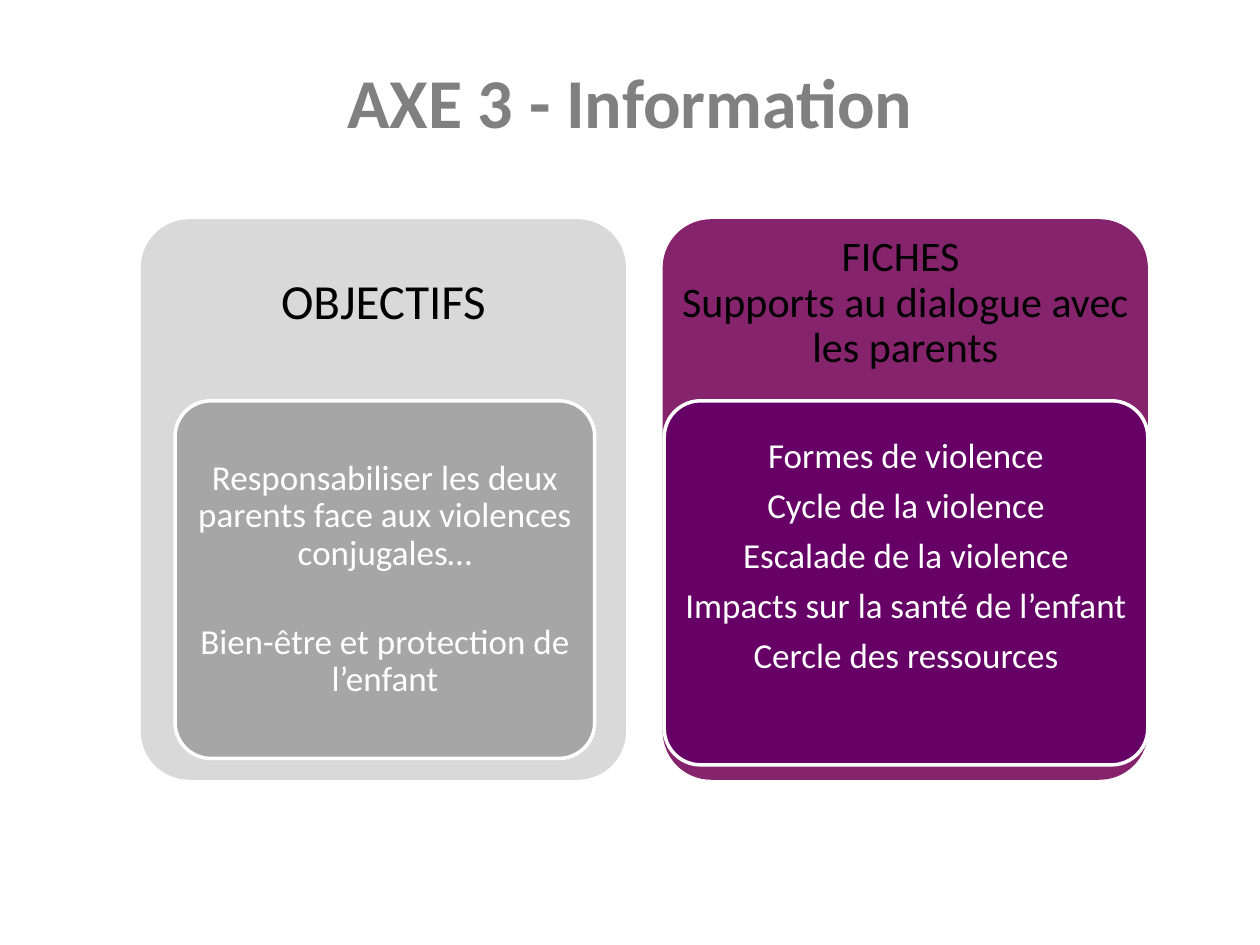
import pptx
import pptx.util
import pptx.dml.color
import pptx.enum.shapes
import pptx.enum.text
from pptx.util import Cm

COLORS = {
    "title": "808080",
    "heading": "000000",
    "detail": "FFFFFF",
    "goals_panel": "D9D9D9",
    "goals_card": "A6A6A6",
    "sheets_panel": "85236D",
    "sheets_card": "660066",
}


class SlideBuilder:
    """Hold the style and the current slide, and add its elements."""

    font = "Calibri"
    top, width, height = 4.42, 9.78, 11.3
    heading_height = 3.4
    card_top = 8.08
    card_margin = 0.21

    def __init__(self, slide):
        self.slide = slide

    def color(self, name):
        return pptx.dml.color.RGBColor.from_string(COLORS[name])

    def rounded(self, box, fill, outlined=False):
        shape = self.slide.shapes.add_shape(
            pptx.enum.shapes.MSO_SHAPE.ROUNDED_RECTANGLE, *map(Cm, box))
        shape.adjustments[0] = 0.1
        shape.shadow.inherit = False
        shape.fill.solid()
        shape.fill.fore_color.rgb = self.color(fill)
        if outlined:
            shape.line.color.rgb = self.color("detail")
            shape.line.width = pptx.util.Pt(2)
        else:
            shape.line.fill.background()

    def text(self, box, lines, size, color, insets, gaps=None, spacing=0.9, bold=False):
        frame = self.slide.shapes.add_textbox(*map(Cm, box)).text_frame
        frame.word_wrap = True
        frame.vertical_anchor = pptx.enum.text.MSO_ANCHOR.MIDDLE
        frame.margin_left, frame.margin_top, frame.margin_right, frame.margin_bottom = map(Cm, insets)
        frame.text = "\n".join(lines)
        for paragraph, gap in zip(frame.paragraphs, gaps or [0] * len(lines)):
            paragraph.alignment = pptx.enum.text.PP_ALIGN.CENTER
            paragraph.line_spacing = spacing
            paragraph.space_after = pptx.util.Pt(gap)
            paragraph.font.name = self.font
            paragraph.font.size = pptx.util.Pt(size)
            paragraph.font.bold = bold
            paragraph.font.color.rgb = self.color(color)

    def title(self, wording):
        self.text((0, 0.74, 25.4, 2.57), [wording], 40, "title",
                  (0.25, 0.13, 0.25, 0.13), spacing=1, bold=True)

    def panel(self, left, theme, heading, size, inset):
        self.rounded((left, self.top, self.width, self.height), f"{theme}_panel")
        gaps = [0] * (len(heading) - 1) + [size * 0.35]
        self.text((left, self.top, self.width, self.heading_height),
                  heading, size, "heading", [inset] * 4, gaps)

    def card(self, left, width, height, theme, details, gaps, bottom=0.1):
        self.rounded((left, self.card_top, width, height), f"{theme}_card", outlined=True)
        margin = self.card_margin
        box = (left + margin, self.card_top + margin, width - 2 * margin, height - 2 * margin)
        self.text(box, details, 20, "detail", (0.15, 0.1, 0.15, bottom), gaps)


def main():
    deck = pptx.Presentation()
    deck.slide_width, deck.slide_height = Cm(25.4), Cm(19.05)
    builder = SlideBuilder(deck.slides.add_slide(deck.slide_layouts[6]))

    builder.panel(2.84, "goals", ["OBJECTIFS"], 28, 0.3)
    goals = ["Responsabiliser les deux parents face aux violences conjugales…",
             "Bien-être et protection de l’enfant"]
    builder.card(3.53, 8.46, 7.21, "goals", goals, [29, 7])

    builder.panel(13.36, "sheets", ["FICHES ", "Supports au dialogue avec les parents"], 24, 0.25)
    sheets = ["Formes de violence", "Cycle de la violence", "Escalade de la violence",
              "Impacts sur la santé de l’enfant", "Cercle des ressources"]
    builder.card(13.39, 9.75, 7.34, "sheets", sheets, [7] * len(sheets), bottom=1.13)

    builder.title("AXE 3 - Information")
    deck.save("out.pptx")


if __name__ == "__main__":
    main()
